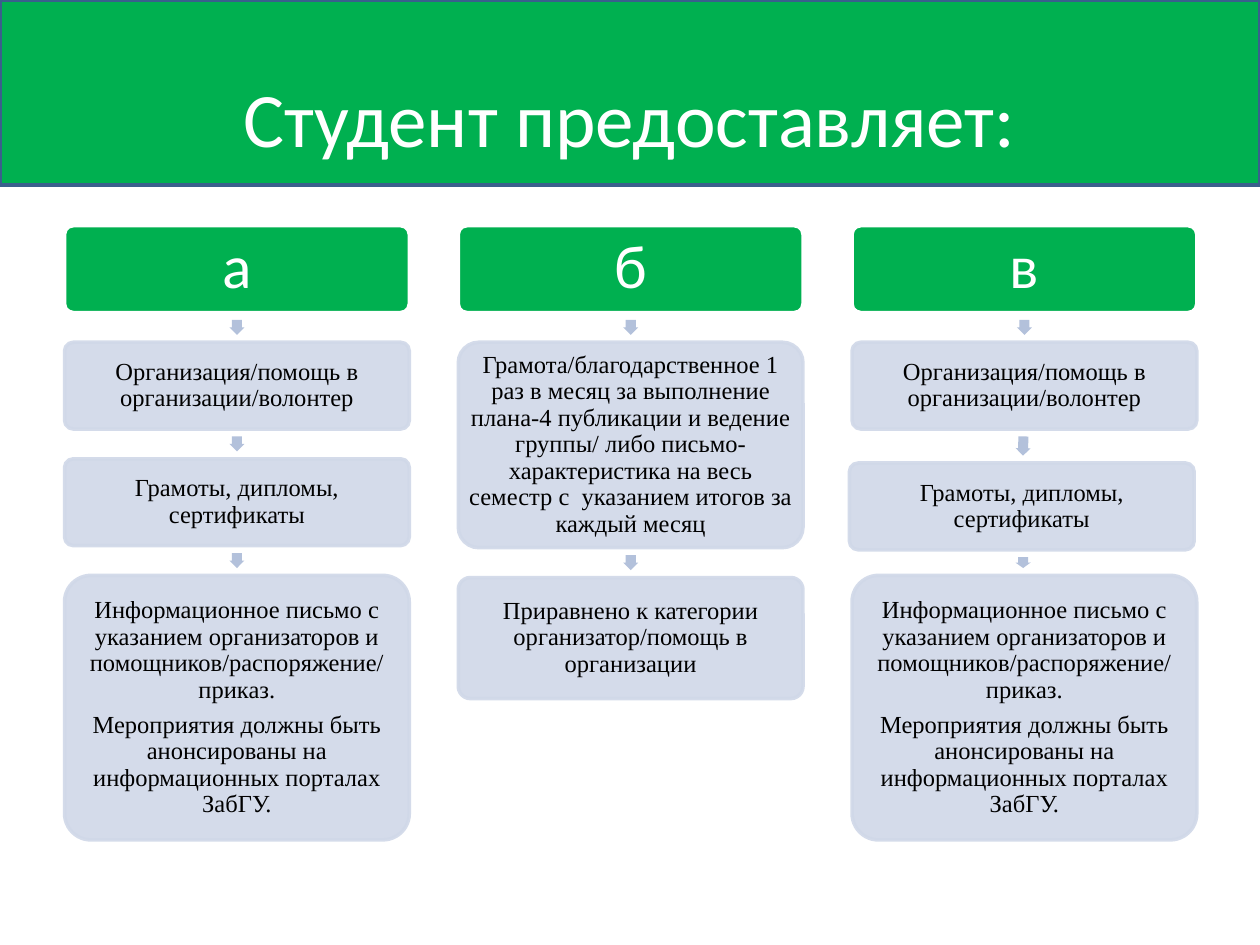
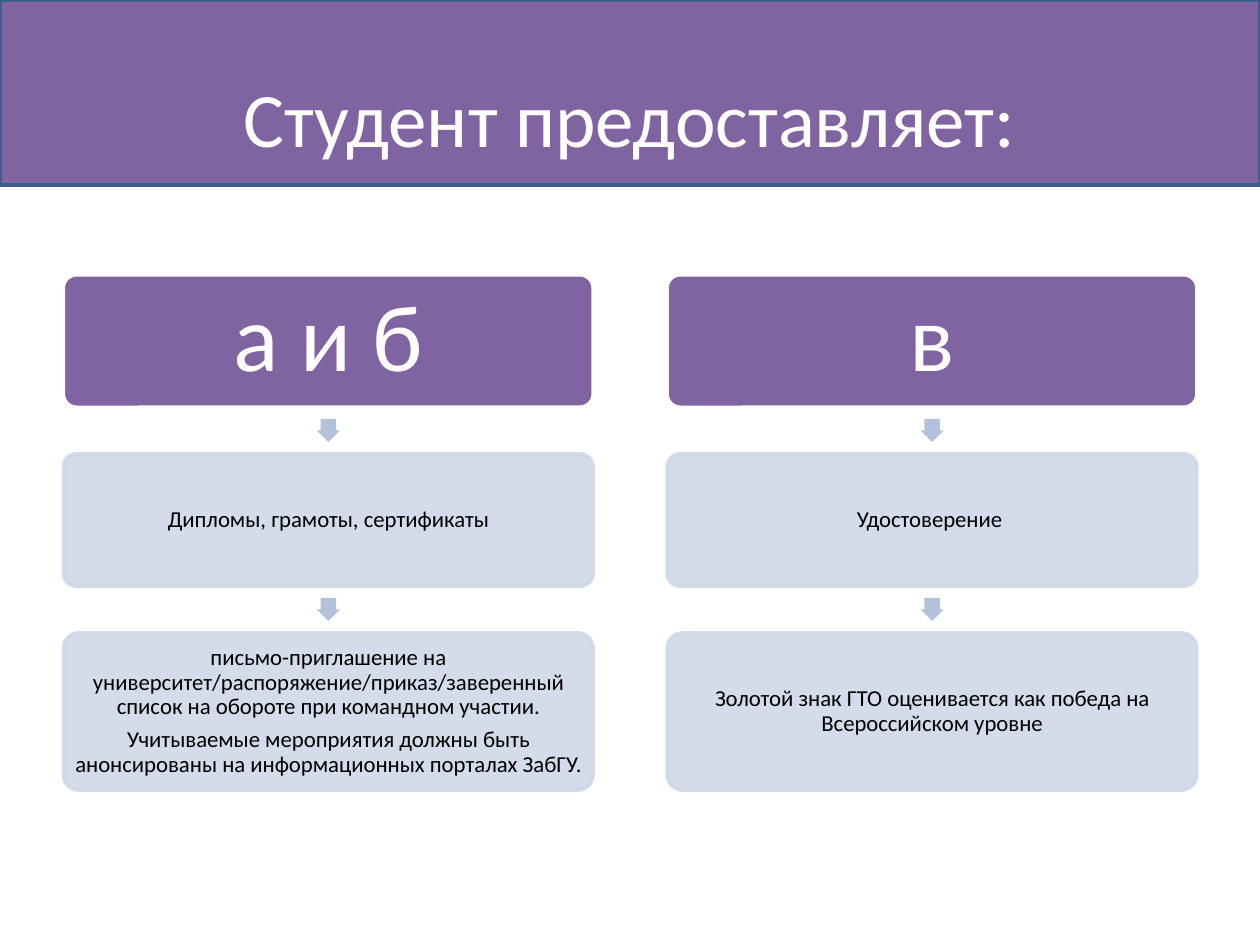
import math
from collections import namedtuple

from pptx import Presentation
from pptx.dml.color import RGBColor
from pptx.enum import shapes, text
from pptx.oxml import ns, xmlchemy
from pptx.util import Pt

# Colours
GREEN = RGBColor(0x00, 0xB0, 0x50)
PURPLE = RGBColor(0x80, 0x64, 0xA2)
BAND_EDGE = RGBColor(0x3A, 0x5F, 0x8C)
CARD = RGBColor(0xD0, 0xD8, 0xE8)
ARROW = RGBColor(0xB3, 0xC1, 0xDB)
WHITE = RGBColor(0xFF, 0xFF, 0xFF)
BLACK = RGBColor(0x00, 0x00, 0x00)

# Shared sizes, in points
SLIDE_W, SLIDE_H = 720, 540
BAND_H = 105.8
EDGE = 2
CARD_ALPHA = 90

Style = namedtuple("Style", "accent left top width pitch head_h gap arrow head_size card_font card_size")
Card = namedtuple("Card", "height lines dx dy", defaults=(0, 0))

GREEN_STYLE = Style(GREEN, 36.9, 129, 197, 225, 49.6, 17, 8.6, 35, "Times New Roman", 14)
PURPLE_STYLE = Style(PURPLE, 36.2, 157, 302.8, 345, 75.7, 26.6, 13.2, 54, "Calibri", 13)


def set_alpha(fill, percent):
    """Make a solid fill partly transparent."""
    colour = fill._xPr.find(ns.qn("a:solidFill"))[0]
    alpha = xmlchemy.OxmlElement("a:alpha")
    alpha.set("val", str(percent * 1000))
    colour.append(alpha)


def add_box(s, kind, x, y, w, h, fill, line=None):
    sp = s.shapes.add_shape(kind, Pt(x), Pt(y), Pt(w), Pt(h))
    sp.shadow.inherit = False
    sp.fill.solid()
    sp.fill.fore_color.rgb = fill
    if line is None:
        sp.line.fill.background()
    else:
        sp.line.color.rgb = line
        sp.line.width = Pt(EDGE)
    return sp


def write(sp, lines, font, size, colour, inset=None, spacing=None):
    """Centre paragraphs in a shape, separated by 35% of the text size."""
    tf = sp.text_frame
    tf.word_wrap = True
    tf.vertical_anchor = text.MSO_ANCHOR.MIDDLE
    if inset is not None:
        for side in ("left", "top", "right", "bottom"):
            setattr(tf, f"margin_{side}", Pt(inset))
    for i, line in enumerate(lines):
        p = tf.add_paragraph() if i else tf.paragraphs[0]
        layout = {"alignment": text.PP_ALIGN.CENTER, "line_spacing": spacing,
                  "space_before": Pt(0.35 * size) if i else None}
        for name, value in layout.items():
            setattr(p, name, value)
        r = p.add_run()
        r.text = line
        for name, value in {"name": font, "size": Pt(size)}.items():
            setattr(r.font, name, value)
        r.font.color.rgb = colour


def add_title_band(s, title, colour):
    add_box(s, shapes.MSO_SHAPE.RECTANGLE, 0, 0, SLIDE_W, BAND_H, colour, BAND_EDGE)
    sp = s.shapes.add_textbox(Pt(36), Pt(21.6), Pt(648), Pt(90))
    write(sp, [title], "Calibri", 44, WHITE)


def add_rounded(s, area, fill, line, lines, font, size, colour):
    sp = add_box(s, shapes.MSO_SHAPE.ROUNDED_RECTANGLE, *area, fill, line)
    sp.adjustments[0] = 0.1
    write(sp, lines, font, size, colour, inset=0.1 * size, spacing=0.9)
    return sp


def add_arrow(s, upper, lower, style):
    """Fill the gap between two boxes, pointing from centre to centre."""
    (x1, y1, w1, h1), (x2, y2, w2, h2) = upper, lower
    gap = y2 - y1 - h1
    length = gap - (style.gap - style.arrow)
    mid_x = (x1 + w1 / 2 + x2 + w2 / 2) / 2
    mid_y = y2 - gap / 2
    sp = add_box(s, shapes.MSO_SHAPE.RIGHT_ARROW, mid_x - length / 2,
                 mid_y - style.arrow / 2, length, style.arrow, ARROW)
    sp.adjustments[0], sp.adjustments[1] = 0.667, 0.5
    sp.rotation = math.degrees(math.atan2(y2 + h2 / 2 - y1 - h1 / 2, x2 - x1))


def add_column(s, index, heading, cards, style):
    x, y = style.left + index * style.pitch, style.top
    area = (x, y, style.width, style.head_h)
    add_rounded(s, area, style.accent, WHITE, [heading], "Calibri", style.head_size, WHITE)
    y += style.head_h + style.gap
    for card in cards:
        above, area = area, (x + card.dx, y + card.dy, style.width, card.height)
        add_arrow(s, above, area, style)
        sp = add_rounded(s, area, CARD, CARD, card.lines,
                         style.card_font, style.card_size, BLACK)
        for fill in (sp.fill, sp.line.fill):
            set_alpha(fill, CARD_ALPHA)
        y += card.height + style.gap


def add_flow_slide(prs, title, columns, style):
    s = prs.slides.add_slide(prs.slide_layouts[6])
    add_title_band(s, title, style.accent)
    for i, (heading, cards) in enumerate(columns):
        add_column(s, i, heading, cards, style)


def main():
    prs = Presentation()
    prs.slide_width, prs.slide_height = Pt(SLIDE_W), Pt(SLIDE_H)
    title = "Студент предоставляет:"

    # Slide 1: three categories
    helper = Card(49.6, ["Организация/помощь в организации/волонтер"])
    awards = Card(49.6, ["Грамоты, дипломы, сертификаты"])
    letter = Card(151.2, [
        "Информационное письмо с указанием организаторов и помощников/распоряжение/ приказ.",
        "Мероприятия должны быть анонсированы на информационных порталах ЗабГУ."])
    certificate = Card(117.4, [
        "Грамота/благодарственное 1 раз в месяц за выполнение плана-4 публикации "
        "и ведение группы/ либо письмо-характеристика на весь семестр с  указанием "
        "итогов за каждый месяц"])
    equal = Card(69.2, ["Приравнено к категории организатор/помощь в организации"])
    add_flow_slide(prs, title, [
        ("a", [helper, awards, letter]),
        ("б", [certificate, equal]),
        ("в", [helper, awards._replace(dx=-1.5, dy=2.4), letter]),
    ], GREEN_STYLE)

    # Slide 2: two categories
    add_flow_slide(prs, title, [
        ("a и б", [
            Card(75.7, ["Дипломы, грамоты, сертификаты"]),
            Card(90, [
                "письмо-приглашение на университет/распоряжение/приказ/заверенный "
                "список на обороте при командном участии.",
                "Учитываемые мероприятия должны быть анонсированы на "
                "информационных порталах ЗабГУ."])]),
        ("в", [
            Card(75.7, ["Удостоверение "]),
            Card(90, ["Золотой знак ГТО оценивается как победа на Всероссийском уровне"])]),
    ], PURPLE_STYLE)

    prs.save("out.pptx")


if __name__ == "__main__":
    main()
